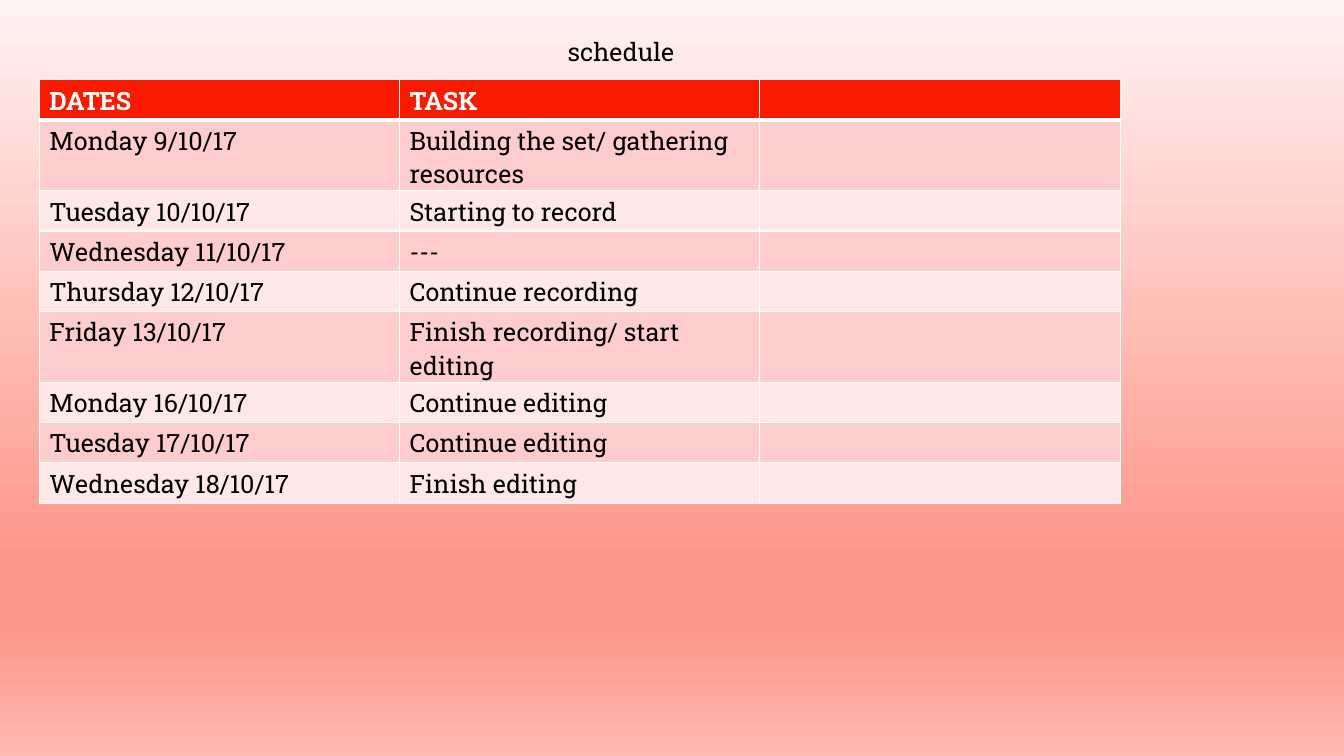
from lxml import etree
from pptx import Presentation
from pptx.dml.color import RGBColor
from pptx.enum.text import MSO_ANCHOR, PP_ALIGN
from pptx.oxml.ns import qn
from pptx.util import Inches, Pt

LEFT = PP_ALIGN.LEFT
MIDDLE = MSO_ANCHOR.MIDDLE
TITLE_ONLY_LAYOUT = 5

FONT = "Roboto Slab"
BLACK = RGBColor(0x00, 0x00, 0x00)
WHITE = RGBColor(0xFF, 0xFF, 0xFF)
RED = RGBColor(0xF8, 0x1B, 0x02)
ROSE = RGBColor(0xFC, 0xCD, 0xCC)
PALE_ROSE = RGBColor(0xFE, 0xE8, 0xE7)
BACKGROUND_STOPS = [
    (0, RGBColor(0xFF, 0xF3, 0xF2)),
    (74, RGBColor(0xFE, 0x97, 0x8B)),
    (83, RGBColor(0xFE, 0x97, 0x8B)),
    (100, RGBColor(0xFE, 0xB9, 0xB2)),
]

COLUMN_COUNT = 3
LINE_HEIGHT = 0.3
ROW_PADDING = 0.1
SCHEDULE = [
    ("DATES", "TASK", 1),
    ("Monday 9/10/17", "Building the set/ gathering resources", 2),
    ("Tuesday 10/10/17", "Starting to record", 1),
    ("Wednesday 11/10/17", "---", 1),
    ("Thursday 12/10/17", "Continue recording", 1),
    ("Friday 13/10/17", "Finish recording/ start editing", 2),
    ("Monday 16/10/17", "Continue editing", 1),
    ("Tuesday 17/10/17", "Continue editing", 1),
    ("Wednesday 18/10/17", "Finish editing", 1),
]


def add_text(paragraph, text, color, bold=False):
    """Add one formatted run to a paragraph."""
    run = paragraph.add_run()
    run.text = text
    run.font.name = FONT
    run.font.size = Pt(18)
    run.font.bold = bold
    run.font.color.rgb = color


def paint_background(slide):
    """Fill the slide with a vertical gradient."""
    fill = slide.background.fill
    fill.gradient()
    fill.gradient_angle = 270
    stop_list = slide.element.xpath(".//a:gsLst")[0]
    for stop in list(stop_list):
        stop_list.remove(stop)
    for percent, color in BACKGROUND_STOPS:
        stop = etree.SubElement(stop_list, qn("a:gs"), pos=str(percent * 1000))
        etree.SubElement(stop, qn("a:srgbClr"), val=str(color))


def place_title(slide, left, top, width, height):
    """Move the title placeholder into its box and fill it."""
    title = slide.shapes.title
    title.left, title.top = Inches(left), Inches(top)
    title.width, title.height = Inches(width), Inches(height)
    frame = title.text_frame
    frame.word_wrap = True
    frame.vertical_anchor = MIDDLE
    paragraph = frame.paragraphs[0]
    paragraph.alignment = LEFT
    paragraph.line_spacing = 1.0
    add_text(paragraph, "schedule", BLACK)


def set_borders(cell, top, bottom):
    """Draw white cell borders, with top and bottom widths in points."""
    properties = cell._tc.get_or_add_tcPr()
    for side, width in (("L", 1), ("R", 1), ("T", top), ("B", bottom)):
        line = etree.SubElement(properties, qn(f"a:ln{side}"), w=str(Pt(width)))
        fill = etree.SubElement(line, qn("a:solidFill"))
        etree.SubElement(fill, qn("a:srgbClr"), val=str(WHITE))


def add_schedule(slide, left, top, width):
    """Add the schedule table, its rows sized by their lines of text."""
    heights = [ROW_PADDING + lines * LINE_HEIGHT for *_, lines in SCHEDULE]
    table = slide.shapes.add_table(
        len(SCHEDULE), COLUMN_COUNT,
        Inches(left), Inches(top), Inches(width), Inches(sum(heights)),
    ).table
    for column in table.columns:
        column.width = Inches(width / COLUMN_COUNT)
    for index, (date, task, _) in enumerate(SCHEDULE):
        table.rows[index].height = Inches(heights[index])
        is_header = index == 0
        band = RED if is_header else (PALE_ROSE, ROSE)[index % 2]
        for cell, text in zip(table.rows[index].cells, (date, task, "")):
            set_borders(cell, 3 if index == 1 else 1, 3 if is_header else 1)
            cell.margin_top = Inches(0.04)
            cell.margin_bottom = 0
            cell.fill.solid()
            cell.fill.fore_color.rgb = band
            if text:
                color = WHITE if is_header else BLACK
                add_text(cell.text_frame.paragraphs[0], text, color, is_header)


def main():
    """Build the schedule slide and save it."""
    presentation = Presentation()
    presentation.slide_width = Inches(13.33)
    presentation.slide_height = Inches(7.5)
    layout = presentation.slide_layouts[TITLE_ONLY_LAYOUT]
    slide = presentation.slides.add_slide(layout)
    paint_background(slide)
    place_title(slide, 5.53, 0.31, 1.45, 0.4)
    add_schedule(slide, 0.39, 0.79, 10.72)
    presentation.save("out.pptx")


if __name__ == "__main__":
    main()
